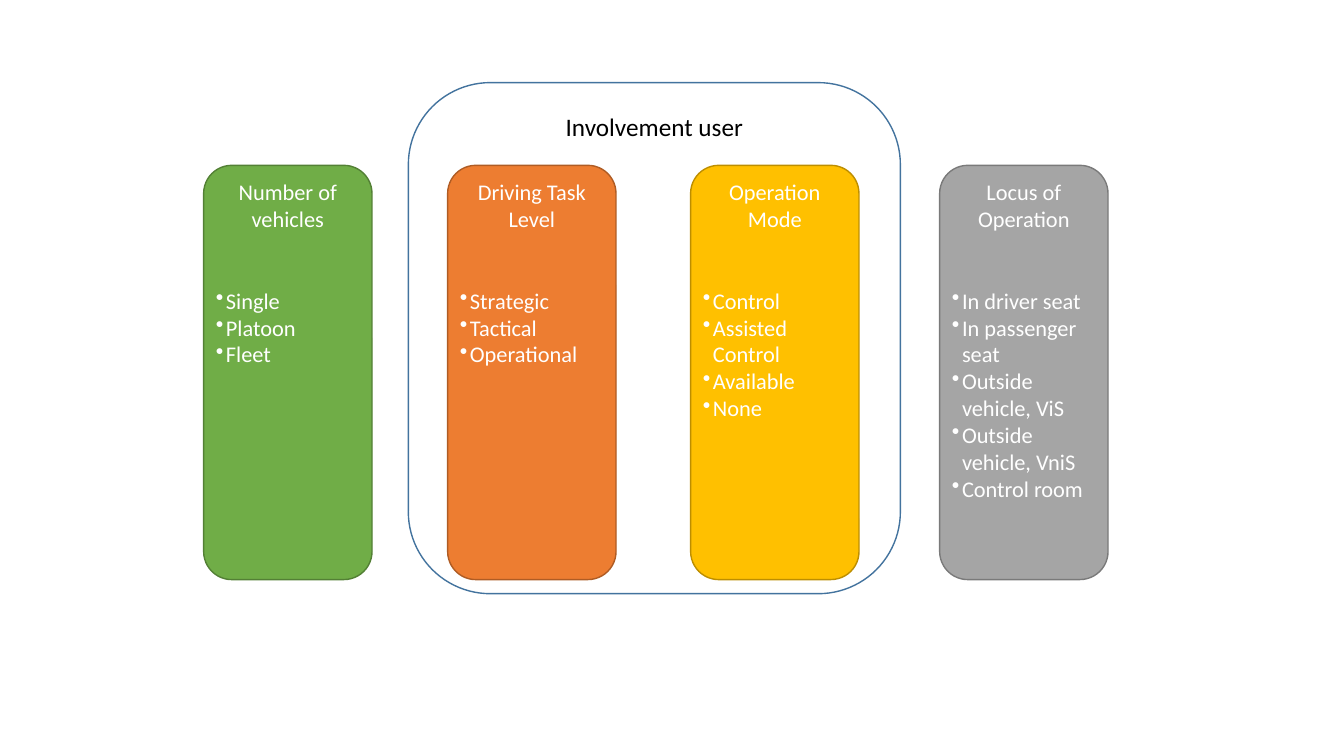
import pptx
import pptx.dml.color
import pptx.enum.shapes
import pptx.enum.text
import pptx.util
from lxml import etree
from pptx.dml.color import RGBColor
from pptx.util import Inches, Pt

WHITE = RGBColor(0xFF, 0xFF, 0xFF)
BLACK = RGBColor(0x00, 0x00, 0x00)
FRAME_BLUE = RGBColor(0x43, 0x73, 0x9E)
GREEN, GREEN_EDGE = RGBColor(0x70, 0xAD, 0x47), RGBColor(0x53, 0x80, 0x35)
ORANGE, ORANGE_EDGE = RGBColor(0xED, 0x7D, 0x31), RGBColor(0xAF, 0x5C, 0x24)
GOLD, GOLD_EDGE = RGBColor(0xFF, 0xC0, 0x00), RGBColor(0xBD, 0x8E, 0x00)
GRAY, GRAY_EDGE = RGBColor(0xA5, 0xA5, 0xA5), RGBColor(0x7A, 0x7A, 0x7A)

FONT = "Calibri"
COLUMN_TOP, COLUMN_WIDTH, COLUMN_HEIGHT = 1.64, 1.67, 4.11
BULLET_INDENT = Inches(0.1)
LIST_GAP = Pt(39)

DIMENSIONS = [
    (2.02, GREEN, GREEN_EDGE, "Number of vehicles", ["Single", "Platoon", "Fleet"]),
    (4.44, ORANGE, ORANGE_EDGE, "Driving Task Level",
     ["Strategic", "Tactical", "Operational"]),
    (6.85, GOLD, GOLD_EDGE, "Operation Mode",
     ["Control", "Assisted Control", "Available", "None"]),
    (9.32, GRAY, GRAY_EDGE, "Locus of Operation",
     ["In driver seat", "In passenger seat", "Outside vehicle, ViS",
      "Outside vehicle, VniS", "Control room"]),
]


def add_rounded_box(slide, box, edge, fill=None):
    """Add a rounded rectangle whose text starts at the top."""
    rounded = slide.shapes.add_shape(
        pptx.enum.shapes.MSO_SHAPE.ROUNDED_RECTANGLE, *map(Inches, box))
    rounded.shadow.inherit = False
    if fill is None:
        rounded.fill.background()
    else:
        rounded.fill.solid()
        rounded.fill.fore_color.rgb = fill
    rounded.line.color.rgb = edge
    rounded.line.width = Pt(1)
    rounded.text_frame.word_wrap = True
    rounded.text_frame.vertical_anchor = pptx.enum.text.MSO_ANCHOR.TOP
    return rounded.text_frame


def write(paragraph, words, size, color, align):
    """Fill a paragraph with one formatted run."""
    paragraph.alignment = align
    run = paragraph.add_run()
    run.text = words
    run.font.name = FONT
    run.font.size = Pt(size)
    run.font.color.rgb = color


def add_bullet(paragraph):
    """Give a paragraph a round bullet with a hanging indent."""
    properties = paragraph._p.get_or_add_pPr()
    properties.set("marL", str(BULLET_INDENT))
    properties.set("indent", str(-BULLET_INDENT))
    bullet = etree.SubElement(properties, pptx.oxml.ns.qn("a:buChar"))
    bullet.set("char", "•")


def add_involvement_frame(slide, box):
    """Draw the outlined frame around the user involvement columns."""
    frame = add_rounded_box(slide, box, FRAME_BLUE)
    write(frame.paragraphs[0], "Involvement user", 18, BLACK,
          pptx.enum.text.PP_ALIGN.CENTER)


def add_dimension(slide, box, fill, edge, heading, levels):
    """Draw one coloured column with its heading and bulleted levels."""
    column = add_rounded_box(slide, box, edge, fill)
    column.margin_left = column.margin_right = Inches(0.04)
    column.margin_top = column.margin_bottom = Inches(0.05)
    write(column.paragraphs[0], heading, 16, WHITE, pptx.enum.text.PP_ALIGN.CENTER)
    for index, level in enumerate(levels):
        paragraph = column.add_paragraph()
        add_bullet(paragraph)
        if index == 0:
            paragraph.space_before = LIST_GAP
        write(paragraph, level, 16, WHITE, pptx.enum.text.PP_ALIGN.LEFT)


def main():
    """Build the slide and save it."""
    deck = pptx.Presentation()
    deck.slide_width, deck.slide_height = Inches(13.33), Inches(7.5)
    slide = deck.slides.add_slide(deck.slide_layouts[6])
    add_involvement_frame(slide, (4.05, 0.82, 4.88, 5.07))
    for left, fill, edge, heading, levels in DIMENSIONS:
        box = (left, COLUMN_TOP, COLUMN_WIDTH, COLUMN_HEIGHT)
        add_dimension(slide, box, fill, edge, heading, levels)
    deck.save("out.pptx")


if __name__ == "__main__":
    main()
